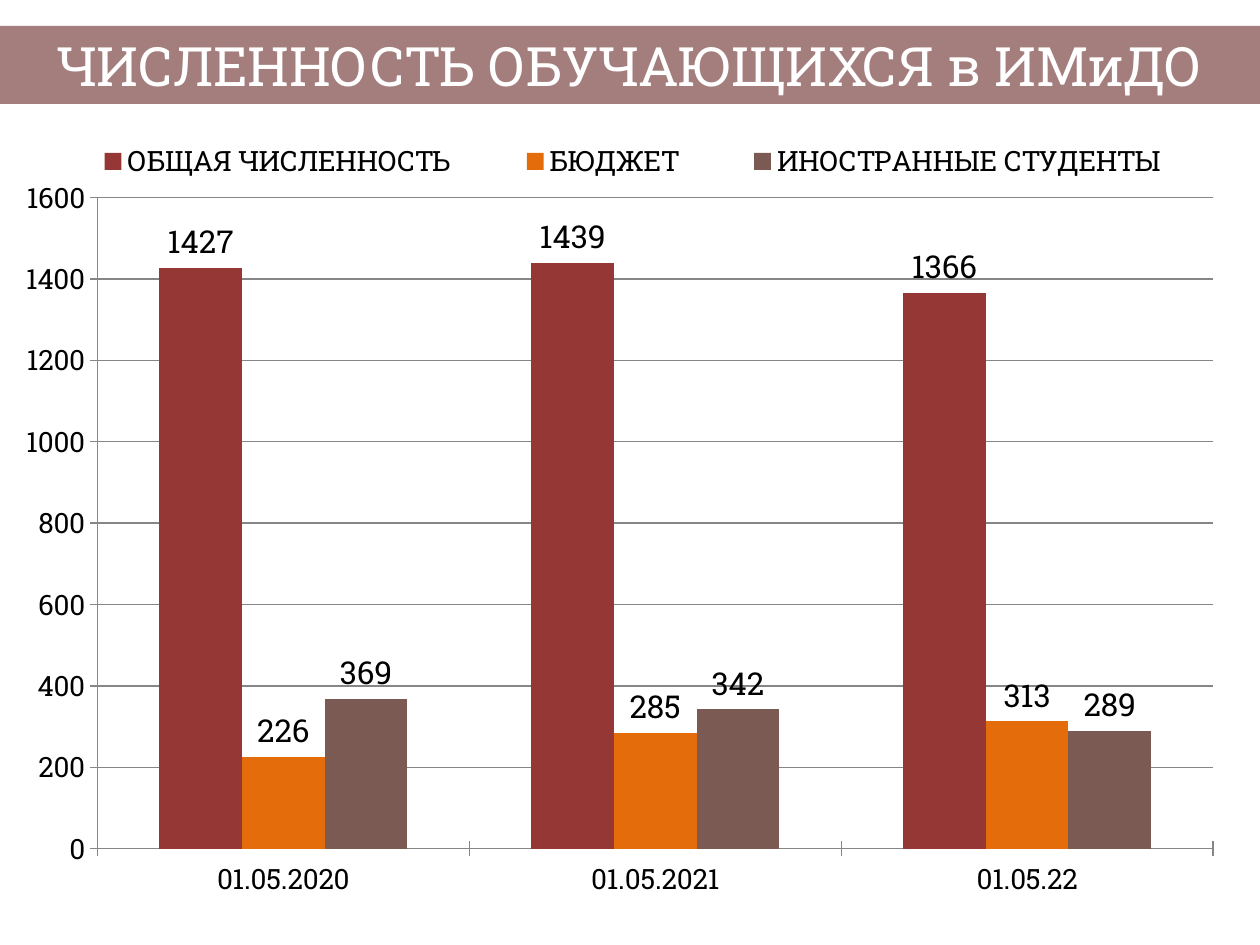
from lxml import etree
from pptx import Presentation
from pptx import util as u
from pptx.chart.data import CategoryChartData
from pptx.dml.color import RGBColor
from pptx.enum import chart as ch, text
from pptx.oxml import parse_xml
from pptx.oxml.ns import nsdecls, qn

PX = 914400 / 126
FONT = "Roboto Slab"
WHITE = RGBColor(0xFF, 0xFF, 0xFF)
BLACK = RGBColor(0x00, 0x00, 0x00)
GREY = RGBColor(0x86, 0x86, 0x86)
MAROON = RGBColor(0x63, 0x25, 0x23)
RED = RGBColor(0x95, 0x37, 0x35)
ORANGE = RGBColor(0xE4, 0x6C, 0x0A)
BROWN = RGBColor(0x7C, 0x5A, 0x54)

DATES = ["01.05.2020", "01.05.2021", "01.05.22"]
GROUPS = [
    ("ОБЩАЯ ЧИСЛЕННОСТЬ", (1427, 1439, 1366), RED),
    ("БЮДЖЕТ", (226, 285, 313), ORANGE),
    ("ИНОСТРАННЫЕ СТУДЕНТЫ", (369, 342, 289), BROWN),
]


def px(*lengths):
    return [u.Emu(round(length * PX)) for length in lengths]


def layout_xml(x, y, w, h, inner=False):
    """Manual chart layout, in fractions of the chart area."""
    target = '<c:layoutTarget val="inner"/>' if inner else ""
    sizes = "".join(f'<c:{tag} val="{value}"/>'
                    for tag, value in zip("xywh", (x, y, w, h)))
    modes = '<c:xMode val="edge"/><c:yMode val="edge"/>'
    return parse_xml(f'<c:layout {nsdecls("c")}><c:manualLayout>'
                     f'{target}{modes}{sizes}</c:manualLayout></c:layout>')


class SlideBuilder:
    def __init__(self, slide):
        self.slide = slide

    def style_font(self, font, size, color=BLACK):
        font.name, font.size, font.bold = FONT, u.Pt(size), False
        font.color.rgb = color

    def title(self, words, box, opacity):
        banner = self.slide.shapes.title
        banner.left, banner.top, banner.width, banner.height = px(*box)
        banner.fill.solid()
        banner.fill.fore_color.rgb = MAROON
        color = banner.fill._xPr.find(".//" + qn("a:srgbClr"))
        etree.SubElement(color, qn("a:alpha")).set("val", str(opacity * 1000))
        frame = banner.text_frame
        frame.text = words
        frame.word_wrap = True
        frame.auto_size = text.MSO_AUTO_SIZE.NONE
        frame.vertical_anchor = text.MSO_ANCHOR.MIDDLE
        frame.margin_top = frame.margin_bottom = 0
        line = frame.paragraphs[0]
        line.alignment = text.PP_ALIGN.CENTER
        self.style_font(line.runs[0].font, 31, WHITE)

    def column_chart(self, categories, groups, box):
        data = CategoryChartData()
        data.categories = categories
        for name, values, _ in groups:
            data.add_series(name, values)
        chart = self.slide.shapes.add_chart(
            ch.XL_CHART_TYPE.COLUMN_CLUSTERED, *px(*box), data).chart
        chart.has_title = False
        self.style_font(chart.font, 16)

        # Columns and their values
        plot = chart.plots[0]
        plot.gap_width, plot.overlap = 150, 0
        plot.vary_by_categories = False
        for series, (_, _, color) in zip(plot.series, groups):
            series.format.fill.solid()
            series.format.fill.fore_color.rgb = color
            labels = series.data_labels
            labels.show_value = True
            labels.position = ch.XL_LABEL_POSITION.OUTSIDE_END
            self.style_font(labels.font, 18)

        # Axes and gridlines
        value_axis, date_axis = chart.value_axis, chart.category_axis
        value_axis.minimum_scale, value_axis.maximum_scale = 0, 1600
        value_axis.major_unit = 200
        value_axis.has_major_gridlines = True
        value_axis.major_tick_mark = ch.XL_TICK_MARK.OUTSIDE
        date_axis.major_tick_mark = ch.XL_TICK_MARK.CROSS
        for axis in (value_axis, date_axis):
            self.style_font(axis.tick_labels.font, 16)
        for part in (value_axis, date_axis, value_axis.major_gridlines):
            part.format.line.color.rgb = GREY
            part.format.line.width = u.Pt(0.75)

        # Legend above the plot
        chart.has_legend = True
        legend = chart.legend
        legend.position = ch.XL_LEGEND_POSITION.RIGHT
        legend.include_in_layout = False
        self.style_font(legend.font, 16)
        root = chart.element
        for old in root.findall(".//" + qn("c:layout")):
            old.getparent().remove(old)
        root.find(".//" + qn("c:legendPos")).addnext(
            layout_xml(0.03, 0.04, 0.94, 0.06))
        root.find(".//" + qn("c:plotArea")).insert(
            0, layout_xml(0.077, 0.115, 0.882, 0.809, inner=True))


def main():
    deck = Presentation()
    deck.slide_width, deck.slide_height = px(1260, 945)
    page = SlideBuilder(deck.slides.add_slide(deck.slide_layouts[5]))
    page.title("ЧИСЛЕННОСТЬ ОБУЧАЮЩИХСЯ в ИМиДО", (-1, 26, 1261, 78), 59)
    page.column_chart(DATES, GROUPS, (0, 105, 1265, 805))
    deck.save("out.pptx")


if __name__ == "__main__":
    main()
